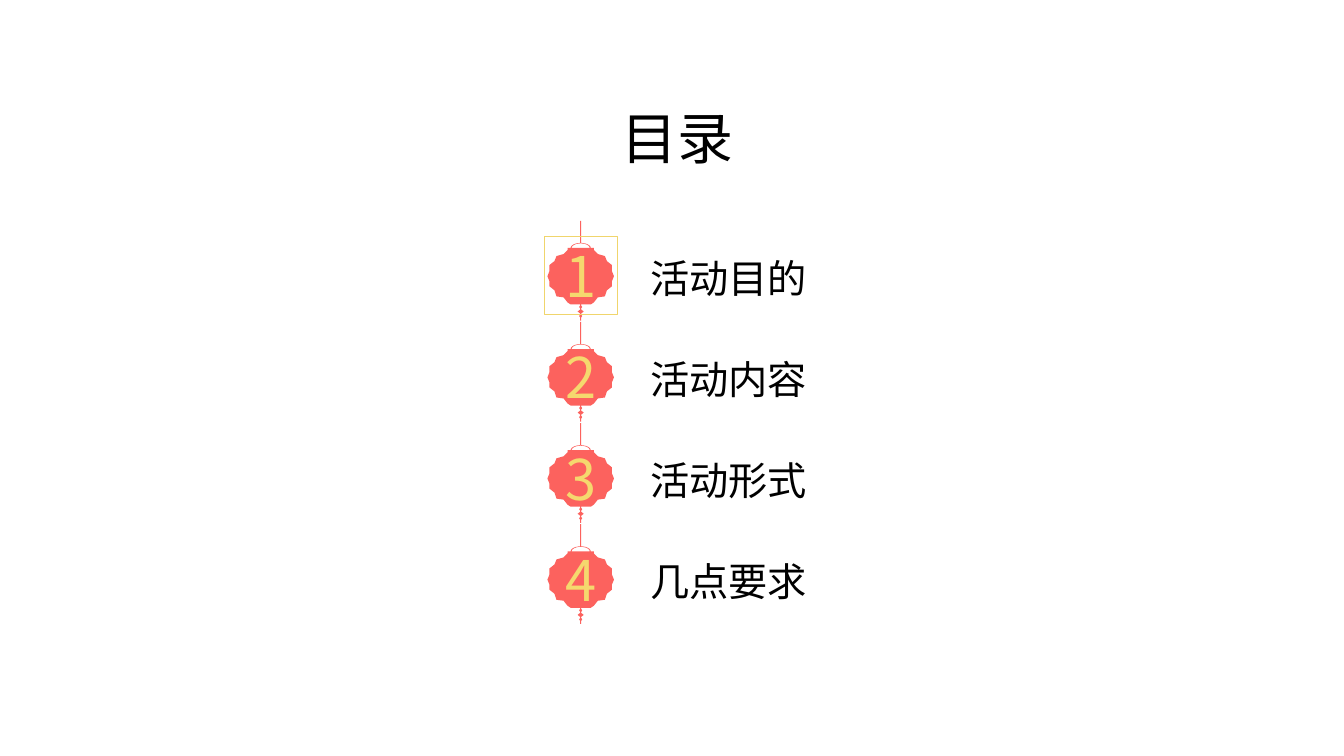
import math

from lxml import etree
from pptx import Presentation
from pptx.dml.color import RGBColor
from pptx.enum import shapes, text
from pptx.oxml import ns
from pptx.util import Inches, Pt

FONT = "Noto Sans CJK SC"
BLACK = RGBColor(0x00, 0x00, 0x00)
CORAL = RGBColor(0xFC, 0x62, 0x5E)
GOLD = RGBColor(0xF5, 0xD8, 0x6E)
FRAME_GOLD = RGBColor(0xF0, 0xD5, 0x6C)

TOPICS = ["活动目的", "活动内容", "活动形式", "几点要求"]
FIRST_TOP, LAST_TOP = 2.19, 5.2
CENTRE_X = 5.76


def handle_arc(rx, ry, base=0.27, steps=6):
    """Points of the right half of the lantern handle, from its top down."""
    angles = [math.pi / 2 * step / steps for step in range(steps + 1)]
    return [(rx * math.sin(a), base - ry * math.cos(a)) for a in angles]


# Right half of the lantern: distance from its axis, distance from its top.
HALF_LANTERN = [
    (0.005, 0), (0.005, 0.22), *handle_arc(0.1, 0.05)[1:],
    (0.13, 0.27), (0.13, 0.29), (0.17, 0.33), (0.24, 0.35), (0.26, 0.4),
    (0.31, 0.44), (0.31, 0.5), (0.33, 0.55), (0.31, 0.6), (0.31, 0.65),
    (0.26, 0.69), (0.24, 0.75), (0.17, 0.76), (0.13, 0.81), (0.1, 0.83),
    (0.005, 0.83), (0.005, 0.84), (0.015, 0.855), (0.005, 0.87),
    (0.005, 0.88), (0.03, 0.9), (0.005, 0.92), (0.005, 0.93),
    (0.015, 0.945), (0.005, 0.96), (0.005, 0.99),
]
HALF_HANDLE_GAP = handle_arc(0.09, 0.045)


def mirrored(half, top):
    """Closed outline on the slide made from its right half."""
    left_half = [(-dx, dy) for dx, dy in reversed(half)]
    return [(Inches(CENTRE_X + dx), Inches(top + dy)) for dx, dy in half + left_half]


def add_lantern(slide, top):
    body = mirrored(HALF_LANTERN, top)
    gap = mirrored(HALF_HANDLE_GAP, top)
    builder = slide.shapes.build_freeform(*body[0])
    builder.add_line_segments(body[1:], close=True)
    builder.move_to(*gap[0])
    builder.add_line_segments(gap[1:], close=True)
    lantern = builder.convert_to_shape()
    lantern.shadow.inherit = False
    lantern.fill.solid()
    lantern.fill.fore_color.rgb = CORAL
    lantern.line.fill.background()


def write(holder, words, size, color, align):
    frame = holder.text_frame
    frame.text = words
    frame.word_wrap = True
    frame.auto_size = text.MSO_AUTO_SIZE.SHAPE_TO_FIT_TEXT
    frame.vertical_anchor = text.MSO_ANCHOR.TOP
    paragraph = frame.paragraphs[0]
    paragraph.alignment = align
    run = paragraph.runs[0]
    run.font.size = Pt(size)
    run.font.name = FONT
    run.font.color.rgb = color
    east_asian = etree.SubElement(run.font._element, ns.qn("a:ea"))
    east_asian.set("typeface", FONT)


def add_title(slide, words):
    title = slide.shapes.title
    title.left, title.top = Inches(5.9), Inches(0.98)
    title.width, title.height = Inches(1.64), Inches(0.77)
    write(title, words, 40, BLACK, text.PP_ALIGN.CENTER)


def add_number(slide, number, top, framed):
    place = Inches(5.4), Inches(top), Inches(0.72), Inches(0.77)
    if framed:
        badge = slide.shapes.add_shape(shapes.MSO_SHAPE.RECTANGLE, *place)
        badge.shadow.inherit = False
        badge.fill.background()
        badge.line.color.rgb = FRAME_GOLD
        badge.line.width = Pt(0.75)
    else:
        badge = slide.shapes.add_textbox(*place)
    write(badge, str(number), 40, GOLD, text.PP_ALIGN.CENTER)


def add_topic(slide, words, top):
    topic = slide.shapes.add_textbox(Inches(6.35), Inches(top), Inches(2.1), Inches(0.57))
    write(topic, words, 28, BLACK, text.PP_ALIGN.LEFT)


def main():
    deck = Presentation()
    deck.slide_width, deck.slide_height = Inches(13.33), Inches(7.5)
    slide = deck.slides.add_slide(deck.slide_layouts[5])
    add_title(slide, "目录")
    pitch = (LAST_TOP - FIRST_TOP) / (len(TOPICS) - 1)
    for index, words in enumerate(TOPICS):
        top = FIRST_TOP + index * pitch
        add_lantern(slide, top)
        add_number(slide, index + 1, top + 0.16, framed=index == 0)
        add_topic(slide, words, top + 0.28)
    deck.save("out.pptx")


if __name__ == "__main__":
    main()
